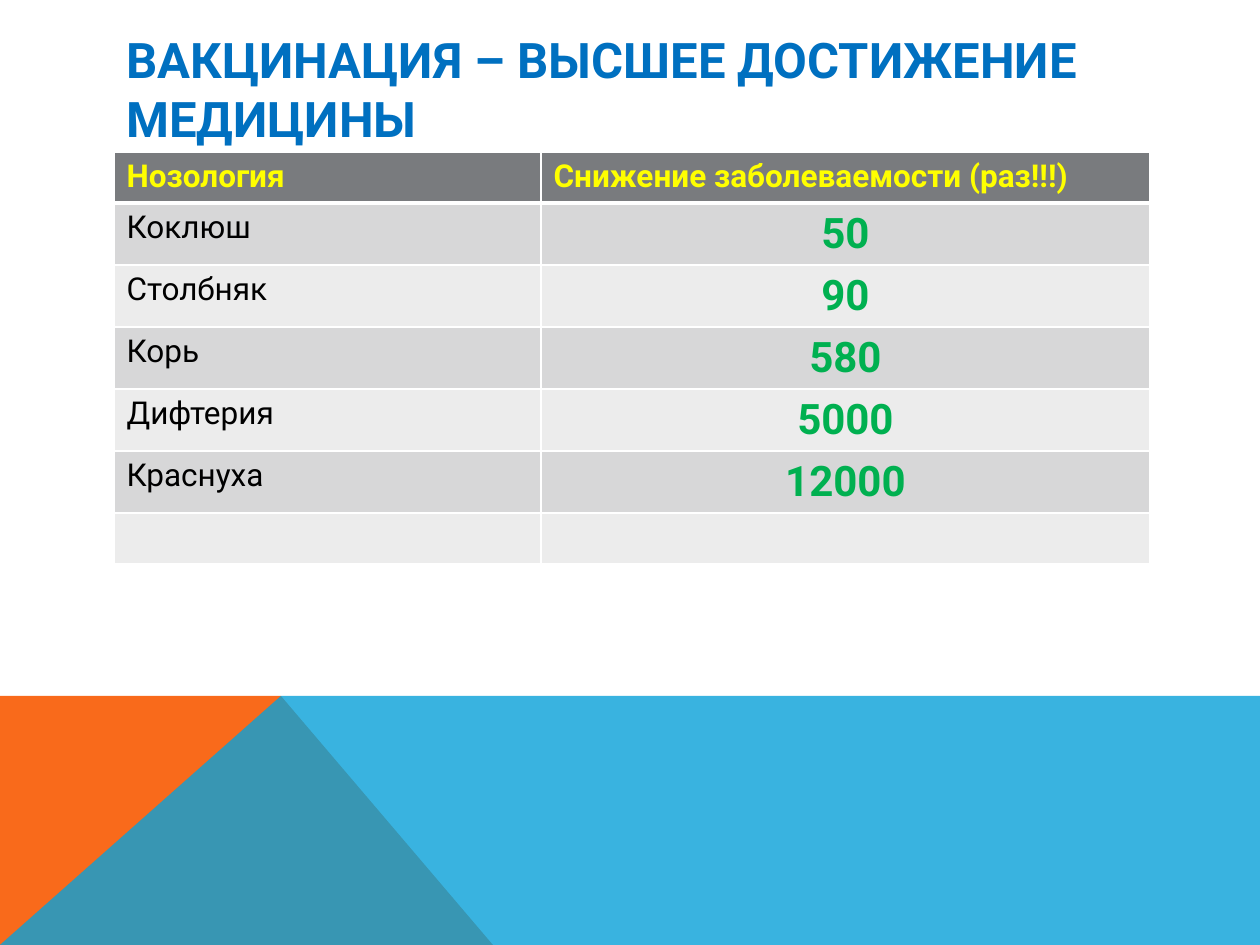
"""Build a slide with a table of disease reduction achieved by vaccination."""
from lxml.etree import SubElement
from pptx import Presentation
from pptx.dml.color import RGBColor
from pptx.enum.text import MSO_ANCHOR, MSO_AUTO_SIZE, PP_ALIGN
from pptx.oxml.ns import qn
from pptx.util import Emu, Pt

SCALE = 914400 / 126


def px(length):
    return Emu(round(length * SCALE))


def style(paragraph, size, color, bold, align=PP_ALIGN.LEFT):
    paragraph.alignment = align
    paragraph.font.name = "Roboto"
    paragraph.font.size = Pt(size)
    paragraph.font.bold = bold
    paragraph.font.color.rgb = RGBColor.from_string(color)


deck = Presentation()
deck.slide_width, deck.slide_height = px(1260), px(945)
page = deck.slides.add_slide(deck.slide_layouts[5])

bands = [
    ("F96A1B", 100, [(0, 945), (0, 696), (281, 696), (493, 945)]),
    ("08A1D9", 80, [(0, 945), (281, 696), (1260, 696), (1260, 945)]),
]
for color, opacity, points in bands:
    builder = page.shapes.build_freeform(*points[0], scale=SCALE)
    builder.add_line_segments(points[1:], close=True)
    band = builder.convert_to_shape()
    band.shadow.inherit = False
    band.line.fill.background()
    band.fill.solid()
    band.fill.fore_color.rgb = RGBColor.from_string(color)
    if opacity < 100:
        tint = band.fill._xPr.find(".//" + qn("a:srgbClr"))
        SubElement(tint, qn("a:alpha"), val=str(opacity * 1000))

title = page.shapes.title
title.left, title.top, title.width, title.height = px(114), px(50), px(1036), px(76)
frame = title.text_frame
frame.text = "ВАКЦИНАЦИЯ – ВЫСШЕЕ ДОСТИЖЕНИЕ МЕДИЦИНЫ"
frame.word_wrap = True
frame.auto_size = MSO_AUTO_SIZE.NONE
frame.vertical_anchor = MSO_ANCHOR.MIDDLE
style(frame.paragraphs[0], 28, "0070C0", True)

rows = [
    ("Нозология", "Снижение заболеваемости (раз!!!)"),
    ("Коклюш", "50"),
    ("Столбняк", "90"),
    ("Корь", "580"),
    ("Дифтерия", "5000"),
    ("Краснуха", "12000"),
    ("", ""),
]
heights = [51, 62, 62, 62, 62, 62, 51]
table = page.shapes.add_table(
    len(rows), 2, px(114), px(152), px(1036), px(sum(heights))
).table
table.columns[0].width, table.columns[1].width = px(427), px(609)

for row_index, (texts, height) in enumerate(zip(rows, heights)):
    table.rows[row_index].height = px(height)
    for column_index, text in enumerate(texts):
        cell = table.cell(row_index, column_index)
        cell.text = text
        paragraph = cell.text_frame.paragraphs[0]
        if row_index == 0:
            fill = "797B7E"
            style(paragraph, 18, "FFFF00", True)
        else:
            fill = "D7D7D8" if row_index % 2 else "ECECEC"
            if column_index and text:
                style(paragraph, 24, "00B050", True, PP_ALIGN.CENTER)
            else:
                style(paragraph, 18, "000000", False)

        properties = cell._tc.get_or_add_tcPr()
        for side in ("lnL", "lnR", "lnT", "lnB"):
            under_header = (row_index, side) in [(0, "lnB"), (1, "lnT")]
            width = Pt(3 if under_header else 1)
            border = SubElement(properties, qn(f"a:{side}"), w=str(width))
            paint = SubElement(border, qn("a:solidFill"))
            SubElement(paint, qn("a:srgbClr"), val="FFFFFF")
        cell.fill.solid()
        cell.fill.fore_color.rgb = RGBColor.from_string(fill)

deck.save("out.pptx")
